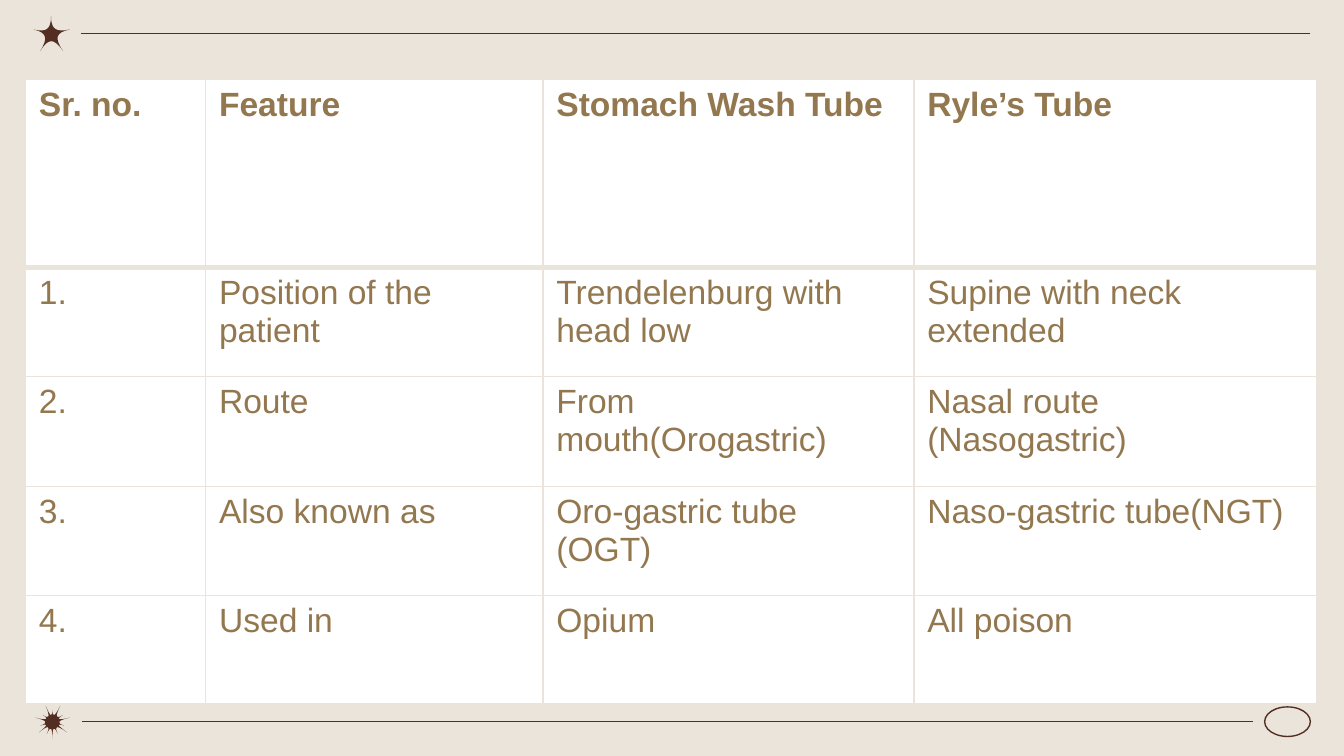
from dataclasses import dataclass

from lxml.etree import SubElement
from pptx import Presentation
from pptx.dml.color import RGBColor
from pptx.enum.shapes import MSO_CONNECTOR as Connector, MSO_SHAPE as Preset
from pptx.oxml.ns import qn
from pptx.util import Emu, Pt

EMU_PER_PX = 9144  # 100 px to the inch


@dataclass(frozen=True)
class Theme:
    background: str = "EBE4DA"
    ornament: str = "532D22"
    cell: str = "FFFFFF"
    text: str = "93774F"
    font: str = "Arial"
    text_size: int = 18
    rule_width: float = 0.75
    border_width: int = 1
    header_border_width: int = 3


@dataclass(frozen=True)
class Rule:
    start: tuple[int, int]
    end: tuple[int, int]


@dataclass(frozen=True)
class Star:
    center: tuple[int, int]
    tips: tuple[tuple[int, int], ...]
    pull: float  # how far the edges bend towards the center


THEME = Theme()

RULES = [Rule((975, 25), (60, 25)), Rule((932, 537), (61, 537))]

STARS = [
    Star((39, 537), ((50, 545), (48, 540), (52, 534), (47, 532), (45, 525),
                     (39, 528), (34, 525), (32, 532), (26, 534), (30, 540),
                     (29, 545), (35, 546), (39, 550), (43, 546)), 0.7),
    Star((38, 25), ((38, 12), (25, 22), (30, 38), (47, 38), (52, 22)), 0.75),
]

COLUMN_WIDTHS = [134, 251, 276, 300]
ROW_HEIGHTS = [140, 81, 82, 81, 81]
ROWS = [
    ("Sr. no.", "Feature", "Stomach Wash Tube", "Ryle’s Tube"),
    ("1.", "Position of the patient", "Trendelenburg with head low",
     "Supine with neck extended"),
    ("2.", "Route", "From mouth(Orogastric)", "Nasal route (Nasogastric)"),
    ("3.", "Also known as", "Oro-gastric tube (OGT)", "Naso-gastric tube(NGT)"),
    ("4.", "Used in", "Opium", "All poison"),
]


def px(length: float) -> Emu:
    return Emu(round(length * EMU_PER_PX))


def color(value: str) -> RGBColor:
    return RGBColor.from_string(value)


def style_line(line) -> None:
    line.color.rgb = color(THEME.ornament)
    line.width = Pt(THEME.rule_width)


def draw_oval(slide, left: int, top: int, width: int, height: int) -> None:
    shape = slide.shapes.add_shape(
        Preset.OVAL, px(left), px(top), px(width), px(height))
    shape.shadow.inherit = False
    shape.fill.background()
    style_line(shape.line)


def draw_rule(slide, rule: Rule) -> None:
    connector = slide.shapes.add_connector(
        Connector.STRAIGHT, *map(px, rule.start + rule.end))
    style_line(connector.line)
    SubElement(connector._element.spPr, qn("a:effectLst"))


def bend_edges(shape, star: Star) -> None:
    """Turn each straight edge into a curve bent towards the center."""
    left, top = (min(values) for values in zip(*star.tips))
    ends = star.tips[1:] + star.tips[:1]
    edges = list(shape._element.iter(qn("a:lnTo")))
    for edge, start, end in zip(edges, star.tips, ends):
        controls = [
            tuple(a + star.pull * (c - a) for a, c in zip(tip, star.center))
            for tip in (start, end)]
        edge.clear()
        curve = SubElement(edge.getparent(), qn("a:cubicBezTo"))
        for x, y in (*controls, end):
            SubElement(curve, qn("a:pt"),
                       x=str(px(x - left)), y=str(px(y - top)))
        edge.getparent().replace(edge, curve)


def draw_star(slide, star: Star) -> None:
    first = star.tips[0]
    builder = slide.shapes.build_freeform(px(first[0]), px(first[1]))
    outline = [(px(x), px(y)) for x, y in star.tips[1:] + (first,)]
    builder.add_line_segments(outline, close=True)
    shape = builder.convert_to_shape()
    bend_edges(shape, star)
    shape.shadow.inherit = False
    shape.fill.solid()
    shape.fill.fore_color.rgb = color(THEME.ornament)
    shape.line.fill.background()


def add_border(cell, side: str, width: int) -> None:
    properties = cell._tc.get_or_add_tcPr()
    line = SubElement(properties, qn(f"a:ln{side}"), w=str(Pt(width)))
    fill = SubElement(line, qn("a:solidFill"))
    SubElement(fill, qn("a:srgbClr"), val=THEME.background)


def fill_cell(cell, text: str, row: int) -> None:
    # Borders come before the fill in the cell properties
    for side in "LRTB":
        below_header = (row, side) in ((0, "B"), (1, "T"))
        add_border(cell, side, THEME.header_border_width if below_header
                   else THEME.border_width)
    cell.fill.solid()
    cell.fill.fore_color.rgb = color(THEME.cell)
    run = cell.text_frame.paragraphs[0].add_run()
    run.text = text
    run.font.name = THEME.font
    run.font.size = Pt(THEME.text_size)
    run.font.bold = row == 0
    run.font.color.rgb = color(THEME.text)


def draw_table(slide, left: int, top: int) -> None:
    table = slide.shapes.add_table(
        len(ROWS), len(COLUMN_WIDTHS), px(left), px(top),
        px(sum(COLUMN_WIDTHS)), px(sum(ROW_HEIGHTS))).table
    table.horz_banding = False
    for column, width in zip(table.columns, COLUMN_WIDTHS):
        column.width = px(width)
    for row, height in zip(table.rows, ROW_HEIGHTS):
        row.height = px(height)
    for row_index, texts in enumerate(ROWS):
        for column_index, text in enumerate(texts):
            fill_cell(table.cell(row_index, column_index), text, row_index)


def main() -> None:
    presentation = Presentation()
    presentation.slide_width, presentation.slide_height = px(1000), px(562.5)
    slide = presentation.slides.add_slide(presentation.slide_layouts[6])
    slide.background.fill.solid()
    slide.background.fill.fore_color.rgb = color(THEME.background)

    # Frame ornaments
    draw_oval(slide, 941, 526, 34, 22)
    for rule in RULES:
        draw_rule(slide, rule)
    for star in STARS:
        draw_star(slide, star)

    # Comparison table
    draw_table(slide, 19, 59)
    presentation.save("out.pptx")


if __name__ == "__main__":
    main()
